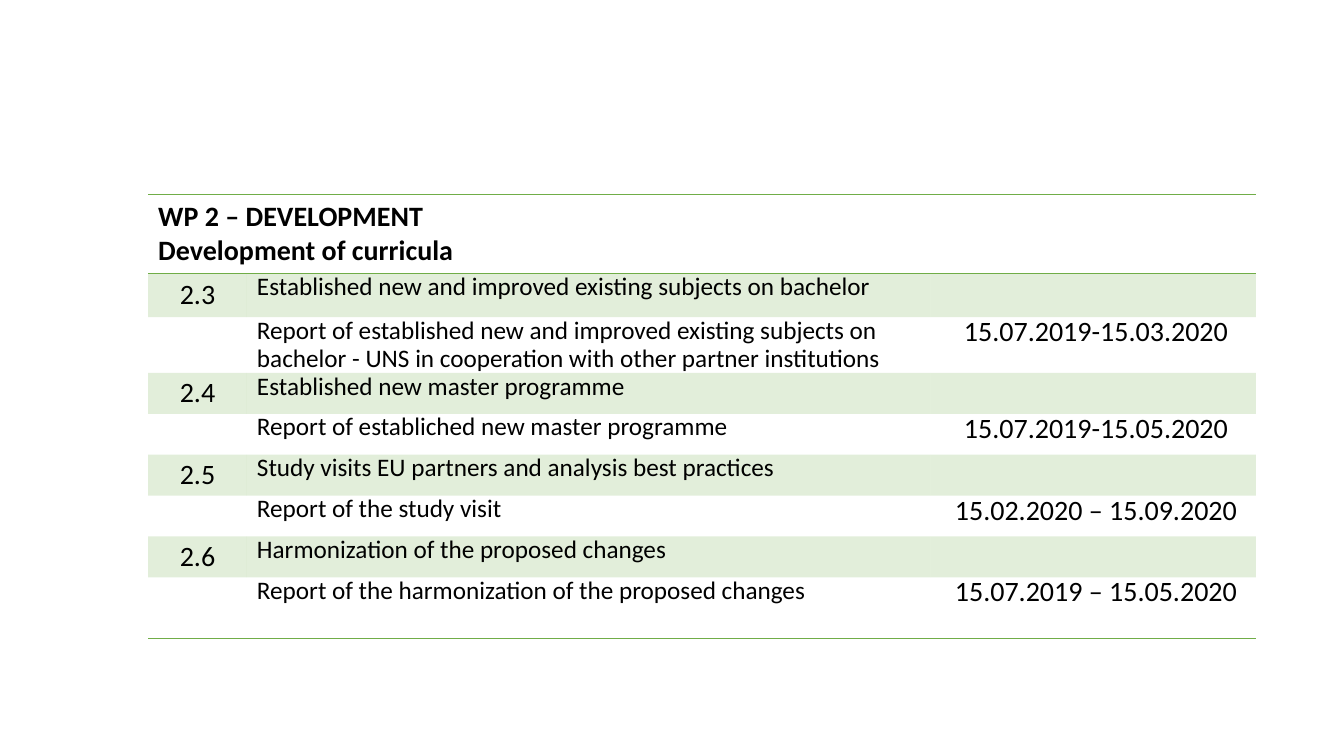
from lxml import etree
from pptx import Presentation
from pptx.dml.color import RGBColor
from pptx.enum import text
from pptx.oxml import ns
from pptx.util import Pt

COLORS = {"green": "70AD47", "ink": "000000"}
FONT = "Calibri"
PLAIN_STYLE = "{2D5ABB26-0587-4C30-8999-92F81FD0307C}"

HEADING = ["WP 2 – DEVELOPMENT", "Development of curricula"]
# number, activity, report, period
ACTIVITIES = [
    ("2.3", "Established new and improved existing subjects on bachelor",
     "Report of established new and improved existing subjects on "
     "bachelor - UNS in cooperation with other partner institutions",
     "15.07.2019-15.03.2020"),
    ("2.4", "Established new master programme",
     "Report of establiched new master programme", "15.07.2019-15.05.2020"),
    ("2.5", "Study visits EU partners and analysis best practices",
     "Report of the study visit", "15.02.2020 – 15.09.2020"),
    ("2.6", "Harmonization of the proposed changes",
     "Report of the harmonization of the proposed changes",
     "15.07.2019 – 15.05.2020"),
]
COLUMN_WIDTHS = [70.6, 488.2, 232.6]
ROW_HEIGHTS = [56.4, 31.2, 39.8, 29.2, 29.2, 29.2, 29.2, 29.2, 44]


def add_run(paragraph, words, size, bold=False):
    run = paragraph.add_run()
    run.text = words
    run.font.name = FONT
    run.font.size = Pt(size)
    run.font.bold = bold
    run.font.color.rgb = RGBColor.from_string(COLORS["ink"])


def shade(cell):
    """Fill a cell with green at 20 percent opacity."""
    cell.fill.solid()
    cell.fill.fore_color.rgb = RGBColor.from_string(COLORS["green"])
    tint = cell._tc.tcPr.find(".//" + ns.qn("a:srgbClr"))
    etree.SubElement(tint, ns.qn("a:alpha"), val="20000")


def rule(cell, *edges):
    """Draw thin green lines; edges are given in the order T, B."""
    for position, edge in enumerate(edges):
        line = etree.Element(ns.qn(f"a:ln{edge}"), w=str(Pt(1)))
        fill = etree.SubElement(line, ns.qn("a:solidFill"))
        etree.SubElement(fill, ns.qn("a:srgbClr"), val=COLORS["green"])
        cell._tc.get_or_add_tcPr().insert(position, line)


def write_cell(cell, words, size, centred=False, indent=4.3):
    cell.margin_left = cell.margin_right = Pt(2.9)
    cell.margin_top = cell.margin_bottom = 0
    paragraph = cell.text_frame.paragraphs[0]
    paragraph.line_spacing = 0.9
    paragraph._p.get_or_add_pPr().set("marL", str(Pt(indent)))
    if centred:
        paragraph.alignment = text.PP_ALIGN.CENTER
    add_run(paragraph, words, size)


def add_plan_table(slide):
    plan = slide.shapes.add_table(
        len(ROW_HEIGHTS), len(COLUMN_WIDTHS), Pt(105.8), Pt(139),
        Pt(sum(COLUMN_WIDTHS)), Pt(sum(ROW_HEIGHTS))).table
    plan.first_row = plan.horz_banding = False
    plan._tbl.tblPr.find(ns.qn("a:tableStyleId")).text = PLAIN_STYLE
    for column, width in zip(plan.columns, COLUMN_WIDTHS):
        column.width = Pt(width)
    for row, height in zip(plan.rows, ROW_HEIGHTS):
        row.height = Pt(height)
    for cell in plan.iter_cells():
        cell.fill.background()
    return plan


def fill_heading(plan):
    plan.cell(0, 0).merge(plan.cell(0, 2))
    for cell in plan.rows[0].cells:
        rule(cell, "T", "B")
    paragraph = plan.cell(0, 0).text_frame.paragraphs[0]
    add_run(paragraph, HEADING[0], 20, bold=True)
    paragraph.add_line_break()
    add_run(paragraph, HEADING[1], 20, bold=True)


def fill_activity(plan, row, number, activity, report, period):
    for cell in plan.rows[row].cells:
        shade(cell)
    write_cell(plan.cell(row, 0), number, 20, centred=True, indent=0)
    plan.cell(row, 0).vertical_anchor = text.MSO_ANCHOR.MIDDLE
    write_cell(plan.cell(row, 1), activity, 18)
    write_cell(plan.cell(row + 1, 1), report, 18)
    write_cell(plan.cell(row + 1, 2), period, 20, centred=True)


def main():
    deck = Presentation()
    deck.slide_width, deck.slide_height = Pt(960), Pt(540)
    slide = deck.slides.add_slide(deck.slide_layouts[6])

    # Work plan: a heading, then two rows for each activity
    plan = add_plan_table(slide)
    fill_heading(plan)
    for index, activity in enumerate(ACTIVITIES):
        fill_activity(plan, 1 + 2 * index, *activity)

    # Closing line
    for cell in plan.rows[len(ROW_HEIGHTS) - 1].cells:
        rule(cell, "B")

    deck.save("out.pptx")


if __name__ == "__main__":
    main()
